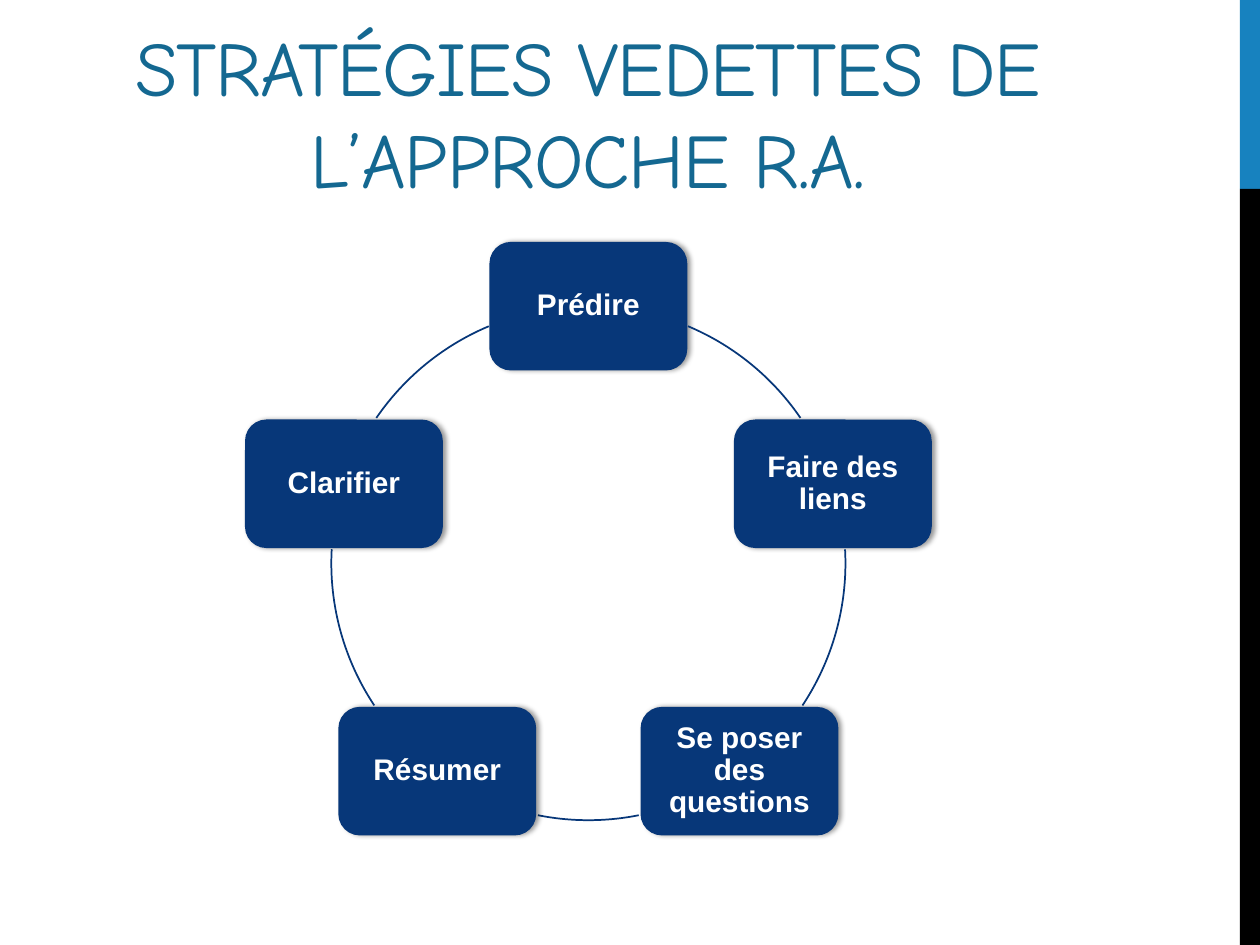
from math import cos, radians, sin

from lxml import etree
from pptx import Presentation
from pptx.dml.color import RGBColor
from pptx.enum.shapes import MSO_SHAPE
from pptx.enum.text import MSO_ANCHOR, MSO_AUTO_SIZE, PP_ALIGN
from pptx.oxml.ns import qn
from pptx.util import Inches, Pt

RECT, ROUND, ARC = MSO_SHAPE.RECTANGLE, MSO_SHAPE.ROUNDED_RECTANGLE, MSO_SHAPE.ARC
CENTER = PP_ALIGN.CENTER
MIDDLE, BOTTOM = MSO_ANCHOR.MIDDLE, MSO_ANCHOR.BOTTOM
NO_FIT = MSO_AUTO_SIZE.NONE

COLORS = {"title": "146891", "navy": "073779", "blue": "1782BF",
          "black": "000000", "white": "FFFFFF"}

# Cycle geometry, in inches
MID_X, MID_Y, RADIUS = 4.67, 4.47, 2.04
BOX_W, BOX_H = 1.57, 1.02

STEPS = ["Prédire", "Faire des liens", "Se poser des questions",
         "Résumer", "Clarifier"]
# Start and end of each arc, in degrees clockwise from the right
ARCS = [(292.8, 325.6), (356.9, 33.6), (78.7, 101.3),
        (146.4, 183.1), (214.4, 247.2)]


class Deck:
    def __init__(self, slide):
        self.slide = slide

    def color(self, name):
        return RGBColor.from_string(COLORS[name])

    def font(self, para, face, size, color, bold=False):
        para.alignment = CENTER
        font = para.font
        font.name, font.size, font.bold = face, Pt(size), bold
        font.color.rgb = self.color(color)

    def shape(self, kind, x, y, w, h):
        shape = self.slide.shapes.add_shape(
            kind, Inches(x), Inches(y), Inches(w), Inches(h))
        shape.shadow.inherit = False
        return shape

    def title(self, text, x, y, w, h):
        title = self.slide.shapes.title
        title.left, title.top = Inches(x), Inches(y)
        title.width, title.height = Inches(w), Inches(h)
        frame = title.text_frame
        frame.text = text
        frame.auto_size, frame.vertical_anchor = NO_FIT, BOTTOM
        para = frame.paragraphs[0]
        self.font(para, "Comic Neue", 44, "title")
        para.runs[0]._r.get_or_add_rPr().set("spc", "-60")

    def bar(self, y, h, color):
        bar = self.shape(RECT, 9.84, y, 0.16, h)
        bar.fill.solid()
        bar.fill.fore_color.rgb = self.color(color)
        bar.line.fill.background()

    def shade(self, shape):
        effects = shape._element.spPr.find(qn("a:effectLst"))
        outer = etree.SubElement(effects, qn("a:outerShdw"), blurRad=str(Pt(3.1)),
                                 dist=str(Pt(1.8)), dir="0", rotWithShape="0")
        tint = etree.SubElement(outer, qn("a:srgbClr"), val=COLORS["black"])
        etree.SubElement(tint, qn("a:alpha"), val="40000")

    def box(self, text, x, y):
        box = self.shape(ROUND, x - BOX_W / 2, y - BOX_H / 2, BOX_W, BOX_H)
        box.fill.solid()
        box.fill.fore_color.rgb = self.color("navy")
        box.line.fill.background()
        self.shade(box)
        frame = box.text_frame
        frame.word_wrap, frame.vertical_anchor = True, MIDDLE
        frame.margin_left = frame.margin_right = Inches(0.07)
        frame.margin_top = frame.margin_bottom = Inches(0.07)
        frame.text = text
        para = frame.paragraphs[0]
        para.line_spacing = 0.9
        self.font(para, "Arial", 17, "white", bold=True)

    def arc(self, start, end):
        arc = self.shape(ARC, MID_X - RADIUS, MID_Y - RADIUS,
                         2 * RADIUS, 2 * RADIUS)
        # Angles are stored in 60000ths of a degree, adjustments in 100000ths
        arc.adjustments[0] = start * 0.6
        arc.adjustments[1] = end * 0.6
        arc.fill.background()
        arc.line.color.rgb = self.color("navy")
        arc.line.width = Pt(1)


def main():
    prs = Presentation()
    prs.slide_width, prs.slide_height = Inches(10), Inches(7.5)
    deck = Deck(prs.slides.add_slide(prs.slide_layouts[5]))

    # Side bars and title
    deck.bar(0, 1.5, "blue")
    deck.bar(1.5, 6, "black")
    deck.title("STRATÉGIES VEDETTES DE L’APPROCHE R.A.", 0.5, 0.17, 8.33, 1.5)

    # Cycle of strategies, clockwise from the top
    for i, (step, ends) in enumerate(zip(STEPS, ARCS)):
        turn = radians(i * 360 / len(STEPS) - 90)
        deck.box(step, MID_X + RADIUS * cos(turn), MID_Y + RADIUS * sin(turn))
        deck.arc(*ends)

    prs.save("out.pptx")


if __name__ == "__main__":
    main()
